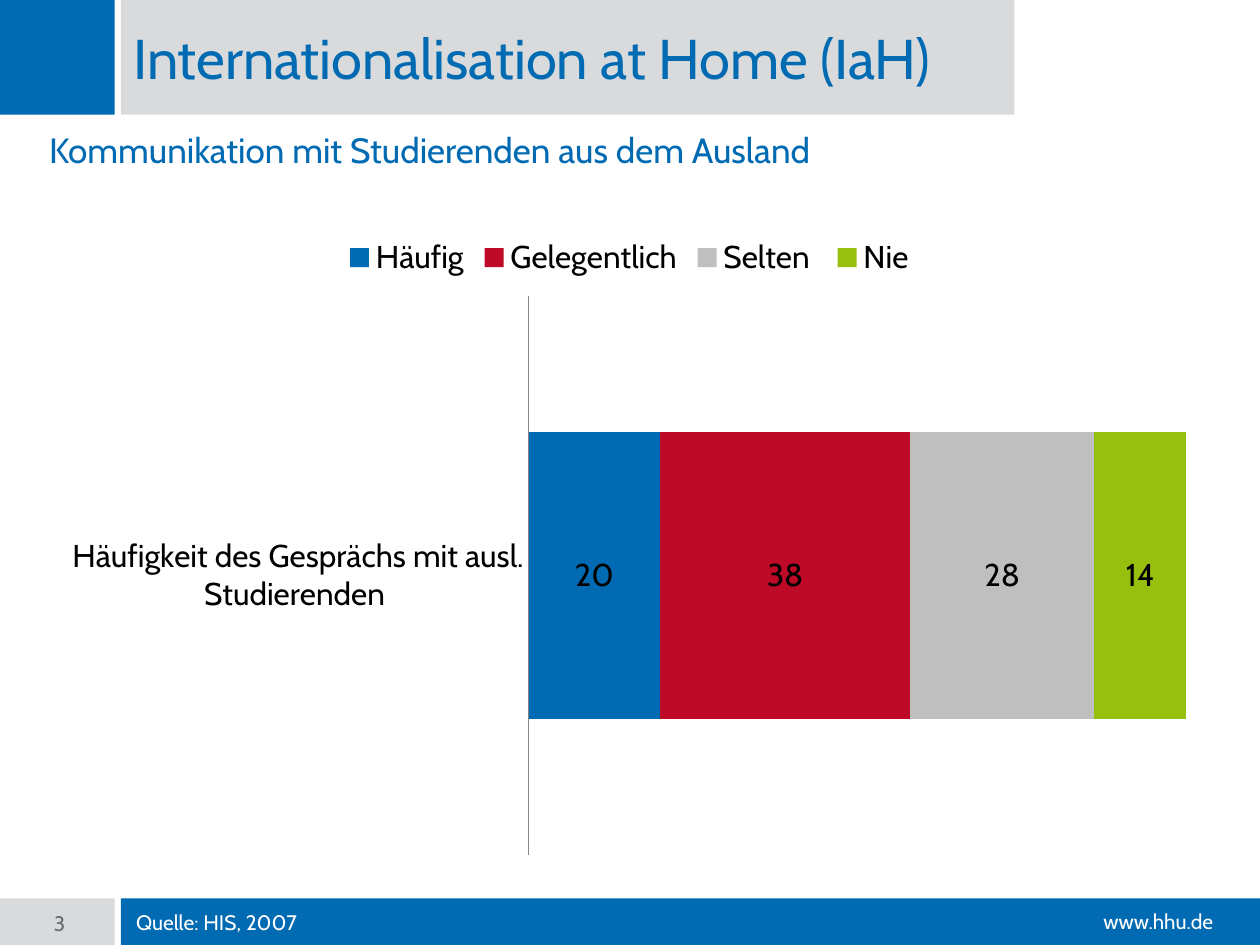
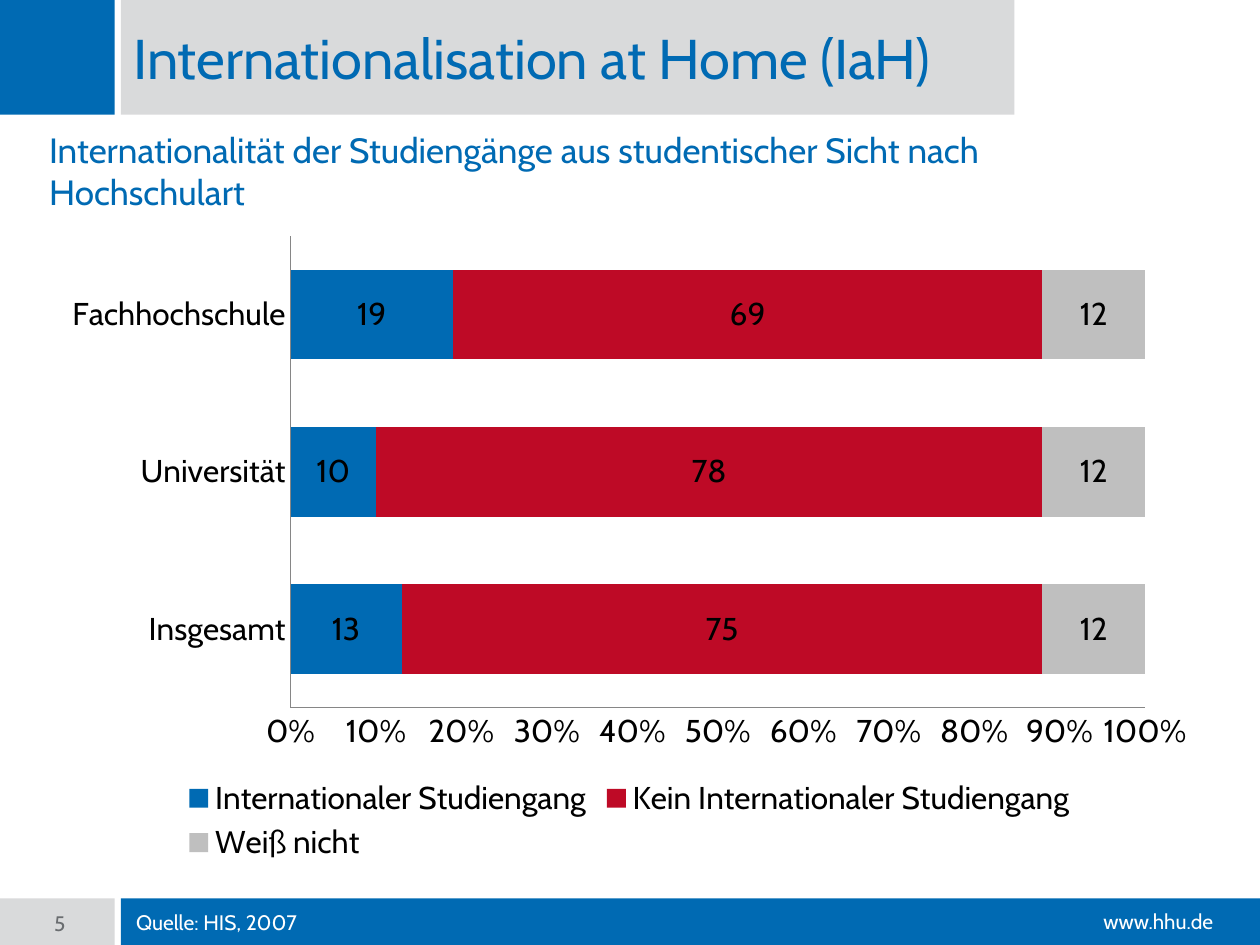
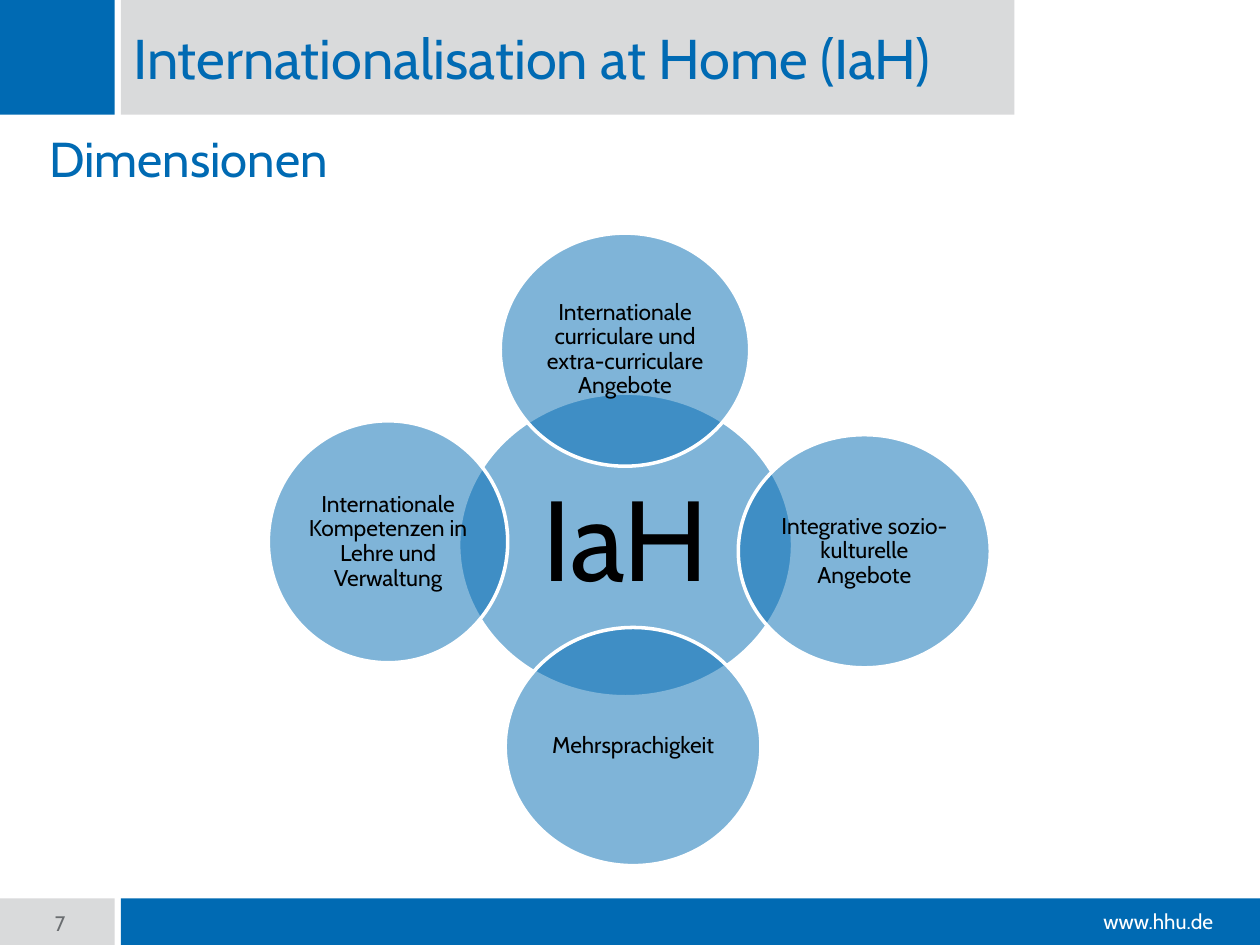
from lxml import etree
from pptx import Presentation
from pptx.chart.data import CategoryChartData
from pptx.dml.color import RGBColor
from pptx.enum.chart import XL_CHART_TYPE, XL_LEGEND_POSITION, XL_TICK_MARK
from pptx.enum.shapes import MSO_SHAPE
from pptx.enum.text import MSO_ANCHOR, PP_ALIGN
from pptx.oxml.ns import qn
from pptx.util import Inches, Pt

RECTANGLE, OVAL = MSO_SHAPE.RECTANGLE, MSO_SHAPE.OVAL
LEFT, CENTER, RIGHT = PP_ALIGN.LEFT, PP_ALIGN.CENTER, PP_ALIGN.RIGHT
TOP, MIDDLE = MSO_ANCHOR.TOP, MSO_ANCHOR.MIDDLE
STACKED_BAR = XL_CHART_TYPE.BAR_STACKED_100
LEGEND_TOP, LEGEND_BOTTOM = XL_LEGEND_POSITION.TOP, XL_LEGEND_POSITION.BOTTOM
NO_TICKS = XL_TICK_MARK.NONE

# Shared style
FONT = "Cabin"
COLORS = {
    "blue": "006AB3", "red": "BE0A26", "silver": "BFBFBF", "green": "97BF0D",
    "band": "D9DADB", "axis": "868686", "page": "6A6D70",
    "black": "000000", "white": "FFFFFF",
}
SERIES_COLORS = ("blue", "red", "silver", "green")
TITLE = "Internationalisation at Home (IaH)"
SOURCE = "Quelle: HIS, 2007"

# Grid: 100 columns by 75 rows of square cells
COLUMNS, ROWS = 100, 75
CELL = Inches(0.1)
SQUARE = 9.1          # corner square, also the height of the title band
BAND_LEFT = 9.6
TITLE_WIDTH = 70.9
FOOTER_TOP, FOOTER_HEIGHT = 71.3, 3.9
MARGIN = 3.9
CHART_AREA = (MARGIN, 17.7, 92.1, 51.2)

# Circles: text, font size, inset in cells, area in cells
CIRCLES = (
    ("IaH", 65, 0.9, (36.4, 31.2, 26.5, 24.1)),
    ("Internationale curriculare und extra-curriculare Angebote", 13, 0.2,
     (39.7, 18.5, 19.8, 18.5)),
    ("Integrative sozio-kulturelle Angebote", 13, 0.2, (58.6, 34.5, 20, 18.5)),
    ("Mehrsprachigkeit", 13, 0.2, (40.1, 49.8, 20.3, 18.9)),
    ("Internationale Kompetenzen in Lehre und Verwaltung", 13, 0.2,
     (21.3, 33.4, 19, 19.2)),
)


def rgb(name):
    return RGBColor.from_string(COLORS[name])


def cells(*numbers):
    return [round(number * CELL) for number in numbers]


def style_font(font, size, color):
    font.name, font.size = FONT, Pt(size)
    font.color.rgb = rgb(color)


def write(shape, text, size, color, align=LEFT, anchor=MIDDLE, insets=(0, 0, 0, 0)):
    """Put one paragraph into a shape; insets run left, top, right, bottom."""
    frame = shape.text_frame
    frame.word_wrap = True
    frame.vertical_anchor = anchor
    (frame.margin_left, frame.margin_top,
     frame.margin_right, frame.margin_bottom) = cells(*insets)
    paragraph = frame.paragraphs[0]
    paragraph.text = text
    paragraph.alignment = align
    style_font(paragraph.font, size, color)
    return paragraph


def add_filled(slide, kind, area, color):
    shape = slide.shapes.add_shape(kind, *cells(*area))
    shape.shadow.inherit = False
    shape.fill.solid()
    shape.fill.fore_color.rgb = rgb(color)
    shape.line.fill.background()
    return shape


def add_text(slide, area, *text, **options):
    write(slide.shapes.add_textbox(*cells(*area)), *text, **options)


def add_frame(presentation, page, heading, heading_size=20, source=None):
    """Blank slide with the corner square, title band, heading and footer."""
    slide = presentation.slides.add_slide(presentation.slide_layouts[6])
    add_filled(slide, RECTANGLE, (0, 0, SQUARE, SQUARE), "blue")
    title = add_filled(slide, RECTANGLE, (BAND_LEFT, 0, TITLE_WIDTH, SQUARE), "band")
    write(title, TITLE, 32, "blue", insets=(1, 0.5, 1, 0.5))
    add_text(slide, (0, 10.2, BAND_LEFT + TITLE_WIDTH, 5.2), heading, heading_size,
             "blue", anchor=TOP, insets=(MARGIN, 0, 0, 0))

    number = add_filled(slide, RECTANGLE, (0, FOOTER_TOP, SQUARE, FOOTER_HEIGHT), "band")
    write(number, str(page), 12, "page", align=RIGHT, insets=(0, 0, MARGIN, 0))
    add_filled(slide, RECTANGLE,
               (BAND_LEFT, FOOTER_TOP, COLUMNS - BAND_LEFT, FOOTER_HEIGHT), "blue")
    add_text(slide, (71.3, 72.1, 25, 2), "www.hhu.de", 12, "white", align=RIGHT)
    if source:
        add_text(slide, (10.8, FOOTER_TOP, 68.9, 3.7), source, 12, "white")
    return slide


def style_axis(axis):
    axis.has_major_gridlines = False
    axis.major_tick_mark = axis.minor_tick_mark = NO_TICKS
    axis.format.line.color.rgb = rgb("axis")
    axis.format.line.width = Pt(0.75)


def add_bars(slide, categories, series, gap, legend, show_scale):
    """Horizontal bars stacked to 100 %, with the value on each part."""
    data = CategoryChartData(number_format="General")
    data.categories = categories
    for name, values in series:
        data.add_series(name, values)
    chart = slide.shapes.add_chart(STACKED_BAR, *cells(*CHART_AREA), data).chart
    style_font(chart.font, 18, "black")
    chart.has_title = False
    chart.has_legend = True
    chart.legend.position = legend
    chart.legend.include_in_layout = False

    style_axis(chart.category_axis)
    style_axis(chart.value_axis)
    chart.value_axis.visible = show_scale
    chart.value_axis.tick_labels.number_format = "0%"
    chart.value_axis.tick_labels.number_format_is_linked = False

    plot = chart.plots[0]
    plot.vary_by_categories = False
    plot.gap_width, plot.overlap = gap, 100
    plot.has_data_labels = True
    plot.data_labels.show_value = True
    for bar, color in zip(plot.series, SERIES_COLORS):
        bar.format.fill.solid()
        bar.format.fill.fore_color.rgb = rgb(color)


def add_circle(slide, text, size, inset, area):
    """Half-transparent circle with a white outline and centred text."""
    circle = add_filled(slide, OVAL, area, "blue")
    fill_color = circle.element.spPr.find(f"{qn('a:solidFill')}/{qn('a:srgbClr')}")
    etree.SubElement(fill_color, qn("a:alpha"), val="50000")
    circle.line.color.rgb = rgb("white")
    circle.line.width = Pt(2)
    paragraph = write(circle, text, size, "black", align=CENTER, insets=(inset,) * 4)
    paragraph.line_spacing = 0.9


def main():
    presentation = Presentation()
    presentation.slide_width, presentation.slide_height = cells(COLUMNS, ROWS)

    # Communication with students from abroad
    slide = add_frame(presentation, 3, "Kommunikation mit Studierenden aus dem Ausland",
                      source=SOURCE)
    add_bars(slide, ["Häufigkeit des Gesprächs mit ausl. Studierenden "],
             [("Häufig", [20]), ("Gelegentlich", [38]), ("Selten ", [28]), ("Nie", [14])],
             gap=95, legend=LEGEND_TOP, show_scale=False)

    # Internationality by type of university
    slide = add_frame(
        presentation, 5,
        "Internationalität der Studiengänge aus studentischer Sicht nach Hochschulart",
        source=SOURCE)
    add_bars(slide, ["Insgesamt", "Universität", "Fachhochschule"],
             [("Internationaler Studiengang", [13, 10, 19]),
              ("Kein Internationaler Studiengang", [75, 78, 69]),
              ("Weiß nicht", [12, 12, 12])],
             gap=75, legend=LEGEND_BOTTOM, show_scale=True)

    # Dimensions
    slide = add_frame(presentation, 7, "Dimensionen", heading_size=28)
    for circle in CIRCLES:
        add_circle(slide, *circle)

    presentation.save("out.pptx")


if __name__ == "__main__":
    main()
